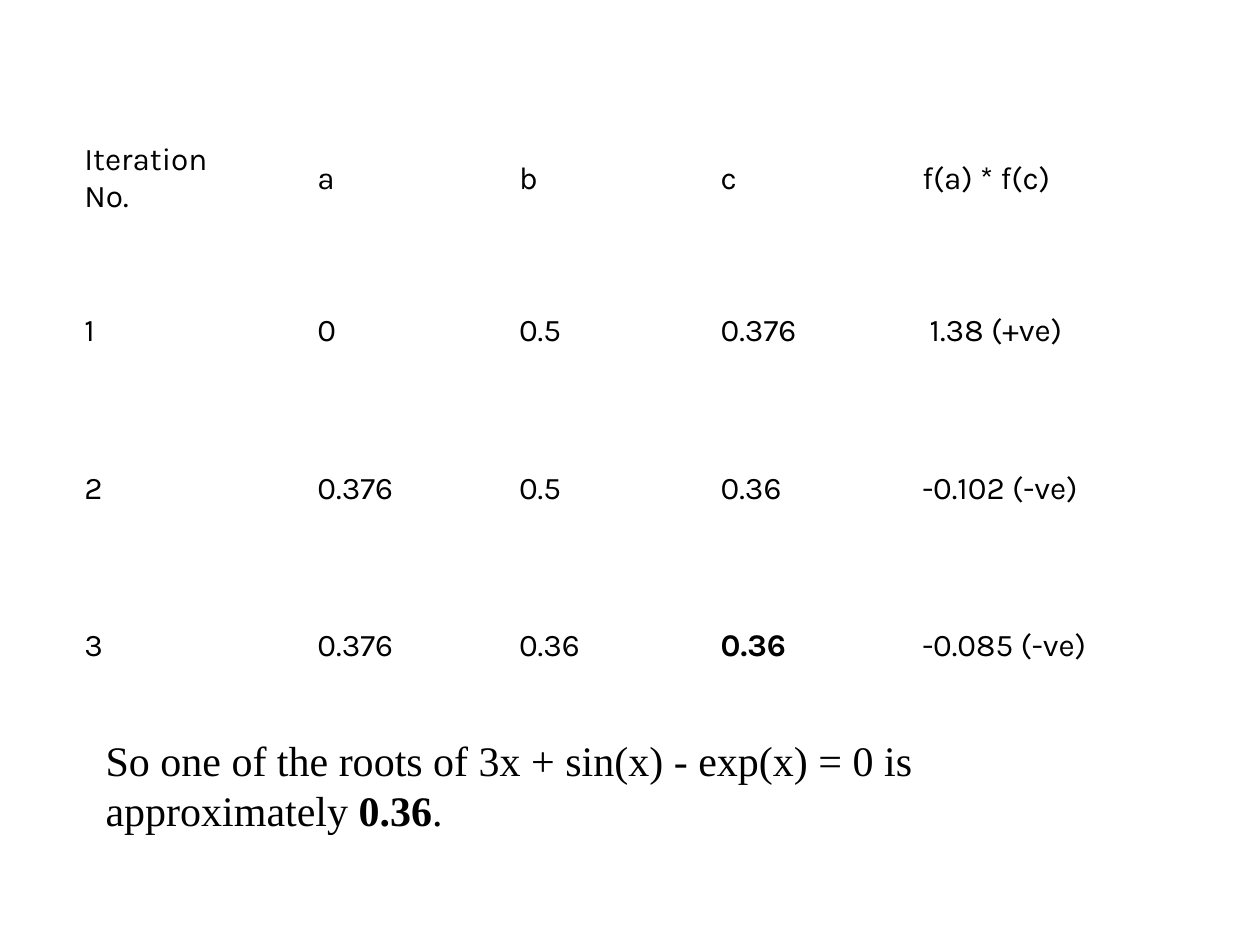
"""Build a slide with a root-finding iteration table and its conclusion."""
from pptx import Presentation
from pptx.dml.color import RGBColor
from pptx.enum.text import MSO_ANCHOR, MSO_AUTO_SIZE
from pptx.util import Pt


def format_run(run, name, size, color="000000", bold=False):
    for attribute, value in {"name": name, "size": Pt(size), "bold": bold}.items():
        setattr(run.font, attribute, value)
    run.font.color.rgb = RGBColor.from_string(color)


ITERATIONS = [
    ["Iteration\vNo.", "a", "b", "c", "f(a) * f(c)"],
    ["1", "0", "0.5", "0.376", " 1.38 (+ve)"],
    ["2", "0.376", "0.5", "0.36", "-0.102 (-ve)"],
    ["3", "0.376", "0.36", "0.36", "-0.085 (-ve)"],
]
ROOT_CELL = (3, 3)
COLUMN_WIDTHS = [133.2] + [115.2] * 4
ROW_HEIGHTS = [84.24] + [90] * 3
CELL_FORMAT = {
    "margin_left": 0,
    "margin_top": 0,
    "margin_right": 0,
    "margin_bottom": 0,
    "vertical_anchor": MSO_ANCHOR.MIDDLE,
}
CONCLUSION = [
    ("So one of the roots of 3x + sin(x) - exp(x) = 0 is approximately ", False),
    ("0.36", True),
    (".", False),
]

presentation = Presentation()
presentation.slide_width, presentation.slide_height = Pt(720), Pt(540)
slide = presentation.slides.add_slide(presentation.slide_layouts[6])

iterations = slide.shapes.add_table(
    len(ROW_HEIGHTS), len(COLUMN_WIDTHS), Pt(48.24), Pt(60),
    Pt(sum(COLUMN_WIDTHS)), Pt(sum(ROW_HEIGHTS)),
).table
iterations.first_row = False
iterations.horz_banding = False
for column, width in zip(iterations.columns, COLUMN_WIDTHS):
    column.width = Pt(width)
for row, height in zip(iterations.rows, ROW_HEIGHTS):
    row.height = Pt(height)

for row_index, values in enumerate(ITERATIONS):
    for column_index, value in enumerate(values):
        cell = iterations.cell(row_index, column_index)
        cell.fill.background()
        for attribute, setting in CELL_FORMAT.items():
            setattr(cell, attribute, setting)
        paragraph = cell.text_frame.paragraphs[0]
        paragraph.text = value
        for run in paragraph.runs:
            format_run(run, "Karla", 18, bold=(row_index, column_index) == ROOT_CELL)

conclusion = slide.shapes.add_textbox(Pt(53.28), Pt(416.16), Pt(600.48), Pt(65.52)).text_frame
conclusion.word_wrap = True
conclusion.auto_size = MSO_AUTO_SIZE.SHAPE_TO_FIT_TEXT
for text, bold in CONCLUSION:
    run = conclusion.paragraphs[0].add_run()
    run.text = text
    format_run(run, "Times New Roman", 24, bold=bold)

presentation.save("out.pptx")
